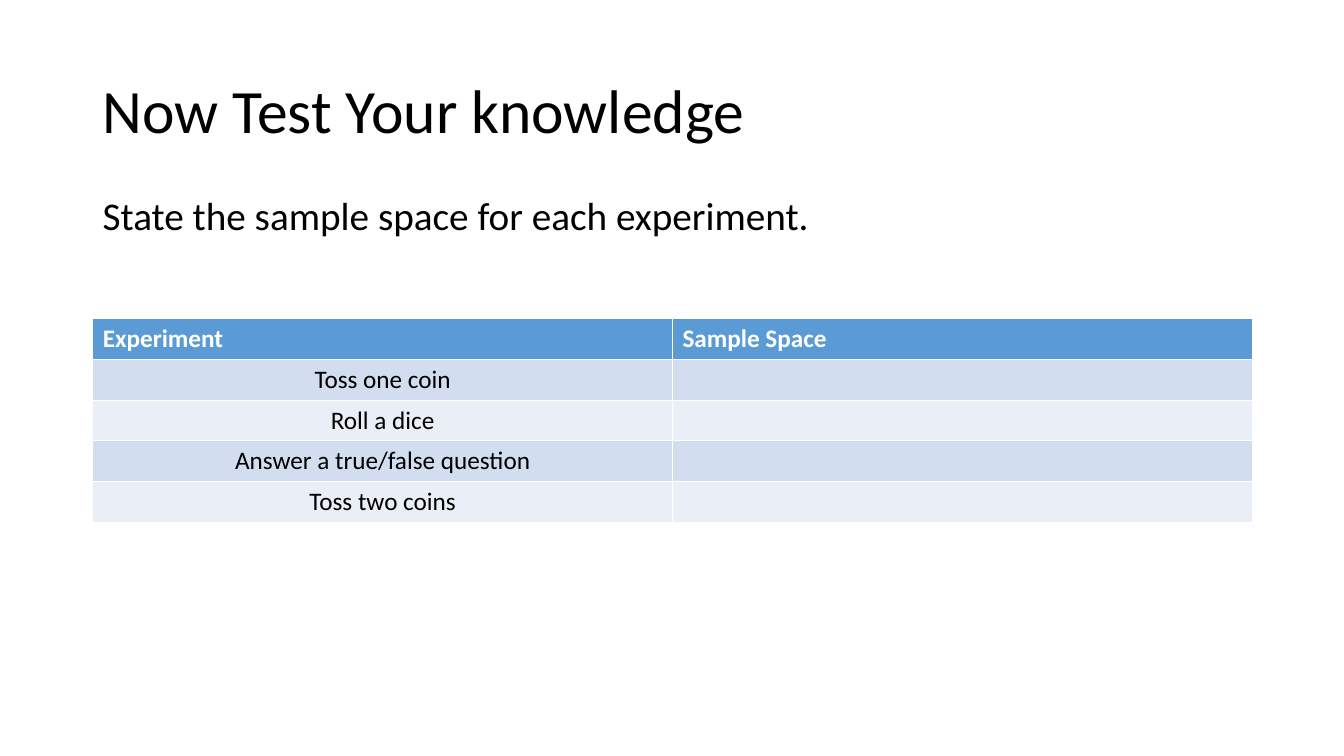
from pptx import Presentation
from pptx.dml.color import RGBColor
from pptx.enum.text import MSO_ANCHOR, PP_ALIGN
from pptx.util import Inches, Pt

MIDDLE, TOP = MSO_ANCHOR.MIDDLE, MSO_ANCHOR.TOP
LEFT, CENTER = PP_ALIGN.LEFT, PP_ALIGN.CENTER

COLORS = {
    "text": "000000",
    "header_text": "FFFFFF",
    "header": "5B9BD5",
    "odd_row": "D2DEEF",
    "even_row": "EAEFF7",
}
FONT = "Calibri"
ROWS = [
    ("Experiment", "Sample Space"),
    ("Toss one coin", ""),
    ("Roll a dice", ""),
    ("Answer a true/false question", ""),
    ("Toss two coins", ""),
]

presentation = Presentation()
presentation.slide_width = Inches(13.33)
presentation.slide_height = Inches(7.5)
slide = presentation.slides.add_slide(presentation.slide_layouts[6])

margin = Inches(0.92)
content_width = Inches(11.5)
row_height = Inches(0.405)


def style_paragraph(paragraph, size, color, bold=False):
    font = paragraph.font
    font.name = FONT
    font.size = Pt(size)
    font.bold = bold
    font.color.rgb = RGBColor.from_string(COLORS[color])


# Title and instruction
for text, top, height, size, anchor, spacing in [
    ("Now Test Your knowledge", 0.4, 1.45, 44, MIDDLE, 0.9),
    ("State the sample space for each experiment.", 1.85, 0.57, 28, TOP, 1.0),
]:
    text_box = slide.shapes.add_textbox(margin, Inches(top), content_width, Inches(height))
    text_frame = text_box.text_frame
    text_frame.word_wrap = True
    text_frame.vertical_anchor = anchor
    paragraph = text_frame.paragraphs[0]
    paragraph.text = text
    paragraph.line_spacing = spacing
    style_paragraph(paragraph, size, "text")

# Experiment table; the default table style supplies the white borders
table = slide.shapes.add_table(
    len(ROWS), 2, margin, Inches(3.16), content_width, row_height * len(ROWS)
).table
for row_index, row in enumerate(ROWS):
    is_header = row_index == 0
    if is_header:
        fill = "header"
    else:
        fill = "odd_row" if row_index % 2 else "even_row"
    for column_index, text in enumerate(row):
        cell = table.cell(row_index, column_index)
        cell.fill.solid()
        cell.fill.fore_color.rgb = RGBColor.from_string(COLORS[fill])
        paragraph = cell.text_frame.paragraphs[0]
        paragraph.text = text
        paragraph.alignment = LEFT if is_header else CENTER
        style_paragraph(paragraph, 18, "header_text" if is_header else "text", is_header)

presentation.save("out.pptx")
